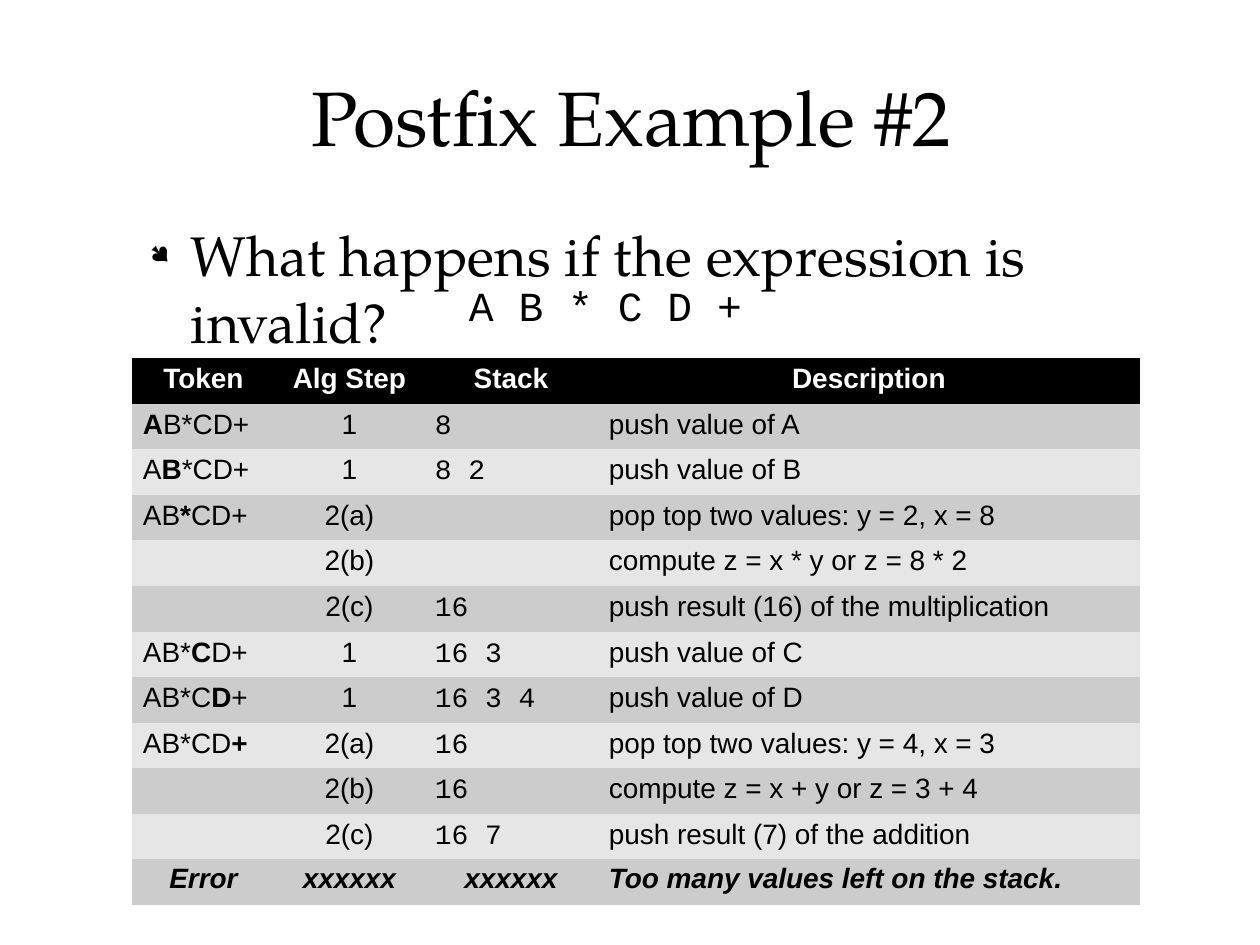
from dataclasses import dataclass
from typing import NamedTuple, Optional

import pptx
import pptx.dml.color
import pptx.enum.text
import pptx.oxml
import pptx.oxml.ns
import pptx.util
from lxml import etree

PX = 914400 / 126
BLACK = pptx.dml.color.RGBColor(0x00, 0x00, 0x00)
WHITE = pptx.dml.color.RGBColor(0xFF, 0xFF, 0xFF)
DARK_BAND = pptx.dml.color.RGBColor(0xCC, 0xCC, 0xCC)
LIGHT_BAND = pptx.dml.color.RGBColor(0xE6, 0xE6, 0xE6)
SERIF, SANS, MONO = "TeX Gyre Pagella", "Arial", "Courier New"
LEFT = pptx.enum.text.PP_ALIGN.LEFT
CENTER = pptx.enum.text.PP_ALIGN.CENTER
TOP = pptx.enum.text.MSO_ANCHOR.TOP
MIDDLE = pptx.enum.text.MSO_ANCHOR.MIDDLE

EXPRESSION = "AB*CD+"
HEADINGS = ("Token", "Alg Step", "Stack", "Description")
ERROR_ROW = ("Error", "xxxxxx", "xxxxxx", "Too many values left on the stack.")
COLUMN_WIDTHS = (143, 149, 174, 542)
TABLE_HEIGHT = 547
CELL_SIZE = 16


class Box(NamedTuple):
    left: int
    top: int
    width: int
    height: int


class Insets(NamedTuple):
    left: int
    top: int
    right: int
    bottom: int


class TextRun(NamedTuple):
    text: str
    bold: bool = False
    italic: bool = False


@dataclass(frozen=True)
class Step:
    """One row of the trace; token is the place in EXPRESSION being read."""
    token: Optional[int]
    rule: str
    stack: str
    description: str


@dataclass(frozen=True)
class Cell:
    runs: tuple[TextRun, ...]
    align: pptx.enum.text.PP_ALIGN = LEFT
    font: str = SANS
    color: pptx.dml.color.RGBColor = BLACK


STEPS = (
    Step(0, "1", "8", "push value of A"),
    Step(1, "1", "8 2", "push value of B"),
    Step(2, "2(a)", "", "pop top two values: y = 2, x = 8"),
    Step(None, "2(b)", "", "compute z = x * y or z = 8 * 2"),
    Step(None, "2(c)", "16", "push result (16) of the multiplication"),
    Step(3, "1", "16 3", "push value of C"),
    Step(4, "1", "16 3 4", "push value of D"),
    Step(5, "2(a)", "16", "pop top two values: y = 4, x = 3"),
    Step(None, "2(b)", "16", "compute z = x + y or z = 3 + 4"),
    Step(None, "2(c)", "16 7", "push result (7) of the addition"),
)


def emu(px: int) -> pptx.util.Emu:
    return pptx.util.Emu(round(px * PX))


def set_insets(holder, insets: Insets) -> None:
    holder.margin_left, holder.margin_top, holder.margin_right, holder.margin_bottom = map(emu, insets)


def add_run(paragraph, run: TextRun, font: str, size: float, color: pptx.dml.color.RGBColor) -> None:
    piece = paragraph.add_run()
    piece.text = run.text
    piece.font.name, piece.font.size = font, pptx.util.Pt(size)
    piece.font.bold, piece.font.italic = run.bold, run.italic
    piece.font.color.rgb = color


def add_text(slide, box: Box, text: str, font: str, size: float, insets: Insets,
             anchor=MIDDLE, align=LEFT, wrap: bool = True):
    """Add a one-paragraph text box and return its paragraph."""
    frame = slide.shapes.add_textbox(*map(emu, box)).text_frame
    frame.word_wrap, frame.vertical_anchor = wrap, anchor
    set_insets(frame, insets)
    paragraph = frame.paragraphs[0]
    paragraph.alignment = align
    add_run(paragraph, TextRun(text), font, size, BLACK)
    return paragraph


def make_bullet(paragraph) -> None:
    paragraph.space_before = pptx.util.Pt(6.4)
    properties = paragraph._p.get_or_add_pPr()
    properties.set("marL", str(emu(55)))
    properties.set("indent", str(emu(-41)))
    for tag, key, value in (("a:buSzPct", "val", "45000"), ("a:buFont", "typeface", "Wingdings"),
                            ("a:buChar", "char", "●")):
        etree.SubElement(properties, pptx.oxml.ns.qn(tag)).set(key, value)


def token_runs(token: Optional[int]) -> tuple[TextRun, ...]:
    """Split EXPRESSION so that only the token being read is bold."""
    if token is None:
        return ()
    parts = (TextRun(EXPRESSION[:token]), TextRun(EXPRESSION[token], bold=True),
             TextRun(EXPRESSION[token + 1:]))
    return tuple(part for part in parts if part.text)


def step_cells(step: Step) -> list[Cell]:
    return [
        Cell(token_runs(step.token)),
        Cell((TextRun(step.rule),), CENTER),
        Cell((TextRun(step.stack),) if step.stack else (), font=MONO),
        Cell((TextRun(step.description),)),
    ]


def trace_rows() -> list[list[Cell]]:
    header = [Cell((TextRun(text, bold=True),), CENTER, color=WHITE) for text in HEADINGS]
    error = [Cell((TextRun(text, bold=True, italic=True),), align)
             for text, align in zip(ERROR_ROW, (CENTER, CENTER, CENTER, LEFT))]
    return [header, *map(step_cells, STEPS), error]


def add_hairlines(table_cell) -> None:
    properties = table_cell._tc.get_or_add_tcPr()
    for index, side in enumerate(("lnL", "lnR", "lnT", "lnB")):
        properties.insert(index, pptx.oxml.parse_xml(
            f'<a:{side} {pptx.oxml.ns.nsdecls("a")} w="360"><a:solidFill>'
            f'<a:srgbClr val="{WHITE}"/></a:solidFill></a:{side}>'))


def size_empty_paragraph(paragraph) -> None:
    """Keep an empty cell from growing its row."""
    end = etree.SubElement(paragraph._p, pptx.oxml.ns.qn("a:endParaRPr"))
    end.set("sz", str(CELL_SIZE * 100))
    etree.SubElement(end, pptx.oxml.ns.qn("a:latin")).set("typeface", SANS)


def fill_cell(table_cell, cell: Cell, fill: pptx.dml.color.RGBColor) -> None:
    table_cell.fill.solid()
    table_cell.fill.fore_color.rgb = fill
    add_hairlines(table_cell)
    set_insets(table_cell, Insets(11, 7, 11, 5) if cell.runs else Insets(11, 0, 11, 0))
    paragraph = table_cell.text_frame.paragraphs[0]
    paragraph.alignment = cell.align
    paragraph.line_spacing = 0.94 if cell.font == MONO else 0.93
    for run in cell.runs:
        add_run(paragraph, run, cell.font, CELL_SIZE, cell.color)
    if not cell.runs:
        size_empty_paragraph(paragraph)


def add_trace(slide, left: int, top: int) -> None:
    rows = trace_rows()
    box = Box(left, top, sum(COLUMN_WIDTHS), TABLE_HEIGHT)
    table = slide.shapes.add_table(len(rows), len(HEADINGS), *map(emu, box)).table
    table.first_row = table.horz_banding = False
    for column, width in zip(table.columns, COLUMN_WIDTHS):
        column.width = emu(width)
    edges = [round(i * TABLE_HEIGHT / len(rows)) for i in range(len(rows) + 1)]
    for index, cells in enumerate(rows):
        table.rows[index].height = emu(edges[index + 1] - edges[index])
        band = DARK_BAND if index % 2 else LIGHT_BAND
        for column, cell in enumerate(cells):
            fill_cell(table.cell(index, column), cell, band if index else BLACK)


def main() -> None:
    presentation = pptx.Presentation()
    presentation.slide_width, presentation.slide_height = emu(1260), emu(945)
    slide = presentation.slides.add_slide(presentation.slide_layouts[6])
    add_text(slide, Box(63, 38, 1137, 158), "Postfix Example #2", SERIF, 44,
             Insets(13, 4, 13, 6), align=CENTER)
    add_trace(slide, 132, 358)
    question = add_text(slide, Box(123, 214, 1056, 624), "What happens if the expression is invalid?",
                        SERIF, 32, Insets(13, 6, 13, 6), anchor=TOP)
    make_bullet(question)
    spaced = add_text(slide, Box(469, 282, 276, 47), " ".join(EXPRESSION), MONO, 23.6,
                      Insets(0, 3, 0, 0), wrap=False)
    spaced.line_spacing = 0.94
    presentation.save("out.pptx")


if __name__ == "__main__":
    main()
